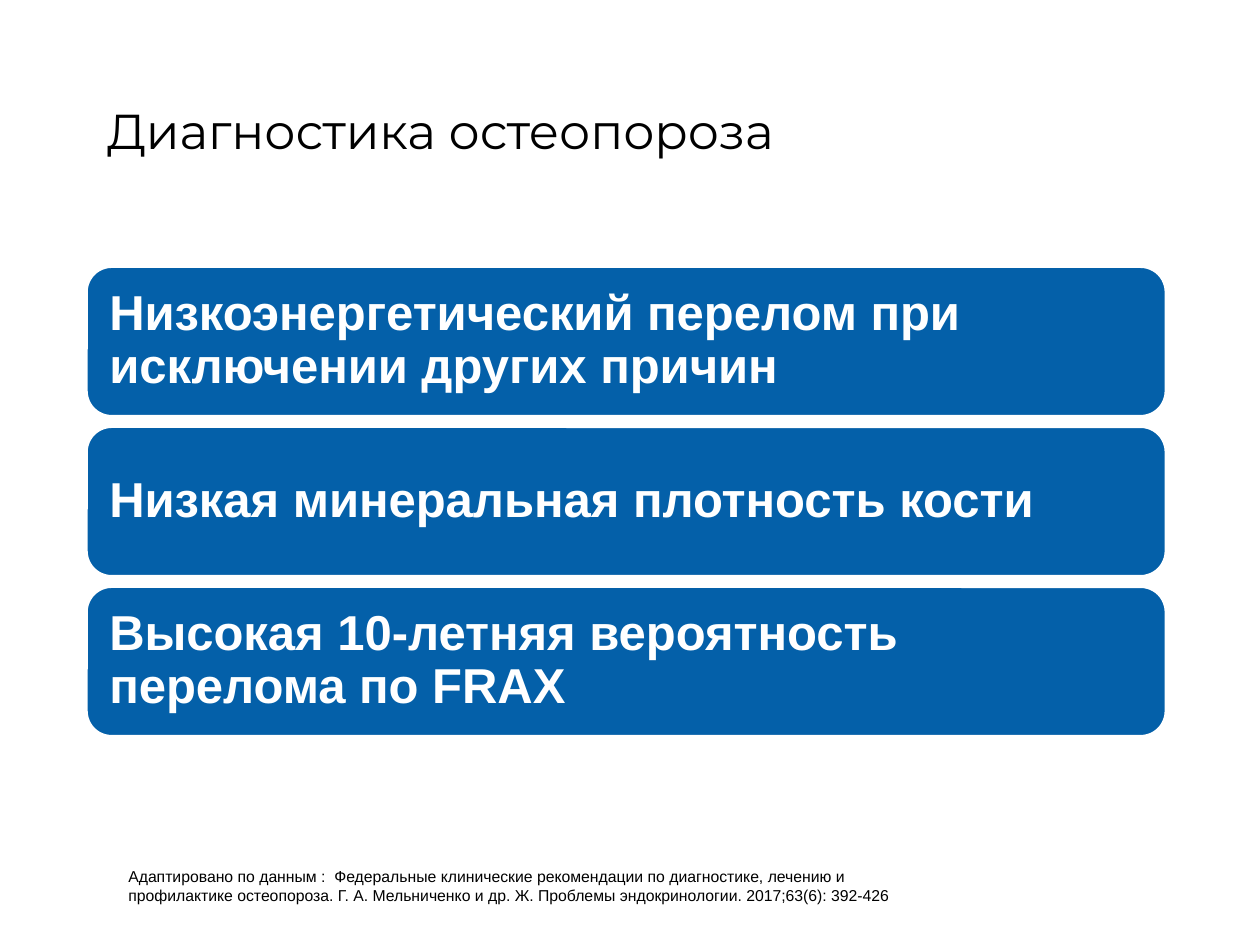
from dataclasses import dataclass
from pptx import Presentation
from pptx.dml.color import RGBColor as RGB
from pptx.enum.shapes import MSO_SHAPE as Shape
from pptx.enum.text import MSO_ANCHOR as Anchor, PP_ALIGN as Align
from pptx.util import Inches, Pt

TITLE = "Диагностика остеопороза"
SIGNS = [
    "Низкоэнергетический перелом при исключении других причин",
    "Низкая минеральная плотность кости",
    "Высокая 10-летняя вероятность перелома по FRAX",
]
NOTE = (
    "Адаптировано по данным :  Федеральные клинические рекомендации "
    "по диагностике, лечению и профилактике остеопороза. "
    "Г. А. Мельниченко и др. Ж. Проблемы эндокринологии. 2017;63(6): 392-426"
)


@dataclass(frozen=True)
class Theme:
    blue: RGB = RGB(0x04, 0x60, 0xA9)
    white: RGB = RGB(255, 255, 255)
    black: RGB = RGB(0, 0, 0)
    head: str = "Montserrat"
    body: str = "Arial"
    big: int = 28
    small: int = 9


T = Theme()
LEFT, TOP, WIDE, HIGH, STEP = 0.69, 2.12, 8.56, 1.18, 1.27


def write(shape, text, font=T.body, size=T.big, color=T.black, bold=False,
          lead=None, anchor=Anchor.MIDDLE, pad=(0, 0)):
    frame = shape.text_frame
    frame.word_wrap = True
    frame.vertical_anchor = anchor
    frame.margin_left = frame.margin_right = Inches(pad[0])
    frame.margin_top = frame.margin_bottom = Inches(pad[1])
    para = frame.paragraphs[0]
    para.alignment = Align.LEFT
    para.line_spacing = lead
    run = para.add_run()
    run.text = text
    run.font.name = font
    run.font.size = Pt(size)
    run.font.bold = bold
    run.font.color.rgb = color


def panel(slide, kind, box, fill, edge=None):
    shape = slide.shapes.add_shape(kind, *map(Inches, box))
    shape.shadow.inherit = False
    shape.fill.solid()
    shape.fill.fore_color.rgb = fill
    if edge is None:
        shape.line.fill.background()
    else:
        shape.line.color.rgb = edge
        shape.line.width = Pt(1)
    return shape


def main():
    deck = Presentation()
    deck.slide_width, deck.slide_height = Inches(10), Inches(7.5)
    slide = deck.slides.add_slide(deck.slide_layouts[5])

    title = slide.shapes.title
    title.left, title.top = Inches(0.85), Inches(0.58)
    title.width, title.height = Inches(8.62), Inches(0.95)
    write(title, TITLE, font=T.head, lead=0.95)

    for row, sign in enumerate(SIGNS):
        box = (LEFT, TOP + row * STEP, WIDE, HIGH)
        card = panel(slide, Shape.ROUNDED_RECTANGLE, box, T.blue, T.white)
        write(card, sign, color=T.white, bold=True, lead=0.9, pad=(0.12, 0.12))

    note = panel(slide, Shape.RECTANGLE, (0.92, 6.83, 6.47, 0.56), T.white)
    write(note, NOTE, size=T.small, anchor=Anchor.TOP, pad=(0.1, 0.05))

    deck.save("out.pptx")


if __name__ == "__main__":
    main()
